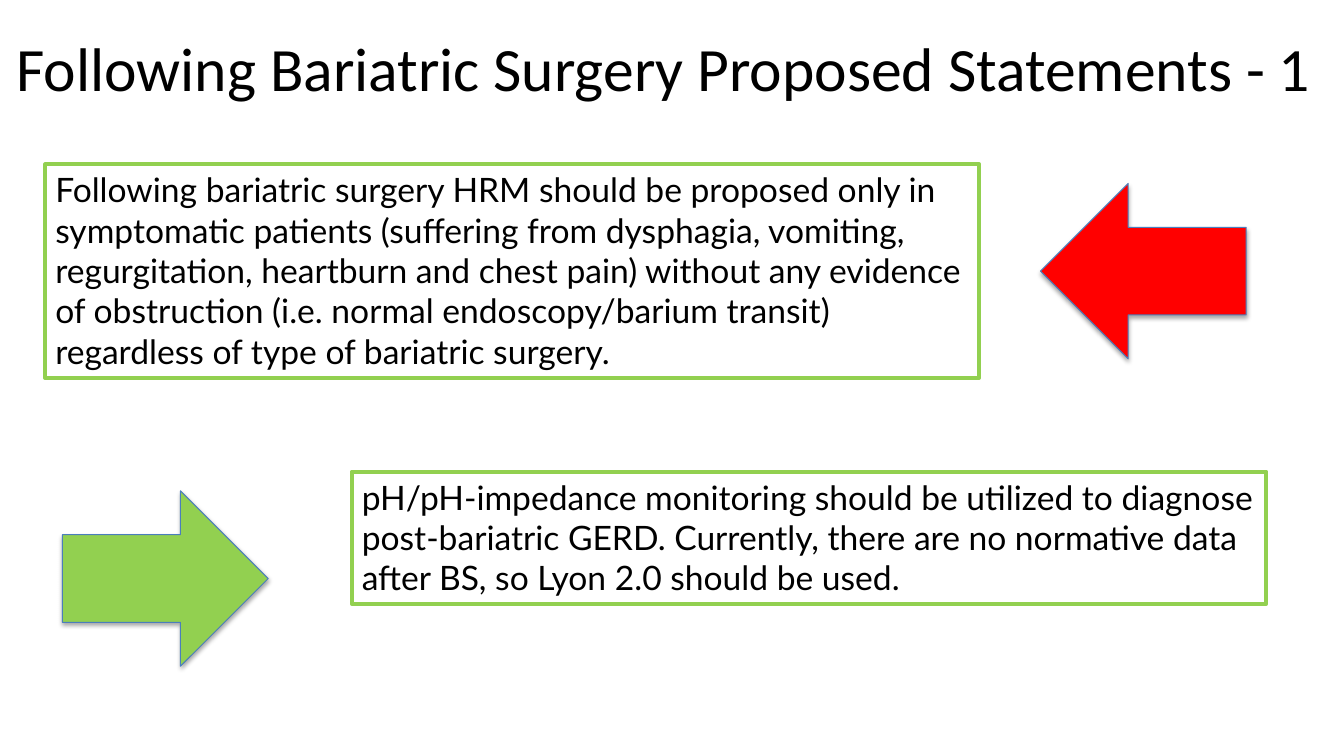
from pptx import Presentation
from pptx.dml.color import RGBColor
from pptx.enum.shapes import MSO_SHAPE
from pptx.enum.text import MSO_ANCHOR, MSO_AUTO_SIZE, PP_ALIGN
from pptx.util import Inches, Pt

TITLE = "Following Bariatric Surgery Proposed Statements - 1"
GREEN, RED, BLUE, BLACK = "92D050", "FF0000", "4B7EBC", "000000"
ROWS = [
    ("Following bariatric surgery HRM should be proposed only in symptomatic "
     "patients (suffering from dysphagia, vomiting, regurgitation, heartburn "
     "and chest pain) without any evidence of obstruction (i.e. normal "
     "endoscopy/barium transit) regardless of type of bariatric surgery.",
     1.63, (0.45, 9.26, 2.12), (10.32, RED, 180)),
    ("pH/pH-impedance monitoring should be utilized to diagnose post-bariatric "
     "GERD. Currently, there are no normative data after BS, so Lyon 2.0 "
     "should be used.",
     4.68, (3.49, 9.07, 1.31), (0.62, GREEN, 0)),
]
ARROW = (2.04, 1.74)
DROP = 0.19


def color(code):
    return RGBColor.from_string(code)


def style(frame, font, size, align, anchor, fit):
    frame.word_wrap = True
    frame.auto_size = fit
    frame.vertical_anchor = anchor
    para = frame.paragraphs[0]
    para.alignment = align
    for run in para.runs:
        run.font.name = font
        run.font.size = Pt(size)
        run.font.color.rgb = color(BLACK)


def add_box(slide, text, left, top, width, height):
    box = slide.shapes.add_shape(
        MSO_SHAPE.RECTANGLE, *map(Inches, (left, top, width, height)))
    box.shadow.inherit = False
    box.fill.background()
    box.line.color.rgb = color(GREEN)
    box.line.width = Pt(3)
    box.text_frame.text = text
    style(box.text_frame, "Lato", 24, PP_ALIGN.LEFT, MSO_ANCHOR.TOP,
          MSO_AUTO_SIZE.SHAPE_TO_FIT_TEXT)


def add_arrow(slide, left, top, fill, turn):
    arrow = slide.shapes.add_shape(
        MSO_SHAPE.RIGHT_ARROW, *map(Inches, (left, top, *ARROW)))
    arrow.rotation = turn
    arrow.fill.solid()
    arrow.fill.fore_color.rgb = color(fill)
    arrow.line.color.rgb = color(BLUE)
    arrow.line.width = Pt(0.75)


def main():
    deck = Presentation()
    deck.slide_width, deck.slide_height = Inches(13.33), Inches(7.5)
    slide = deck.slides.add_slide(deck.slide_layouts[5])
    title = slide.shapes.title
    title.left, title.top, title.width, title.height = map(
        Inches, (0, 0.04, 13.18, 1.25))
    title.text_frame.text = TITLE
    style(title.text_frame, "Calibri", 44, PP_ALIGN.CENTER, MSO_ANCHOR.MIDDLE,
          MSO_AUTO_SIZE.NONE)
    for text, top, (left, width, height), (side, fill, turn) in ROWS:
        add_box(slide, text, left, top, width, height)
        add_arrow(slide, side, top + DROP, fill, turn)
    deck.save("out.pptx")


if __name__ == "__main__":
    main()
